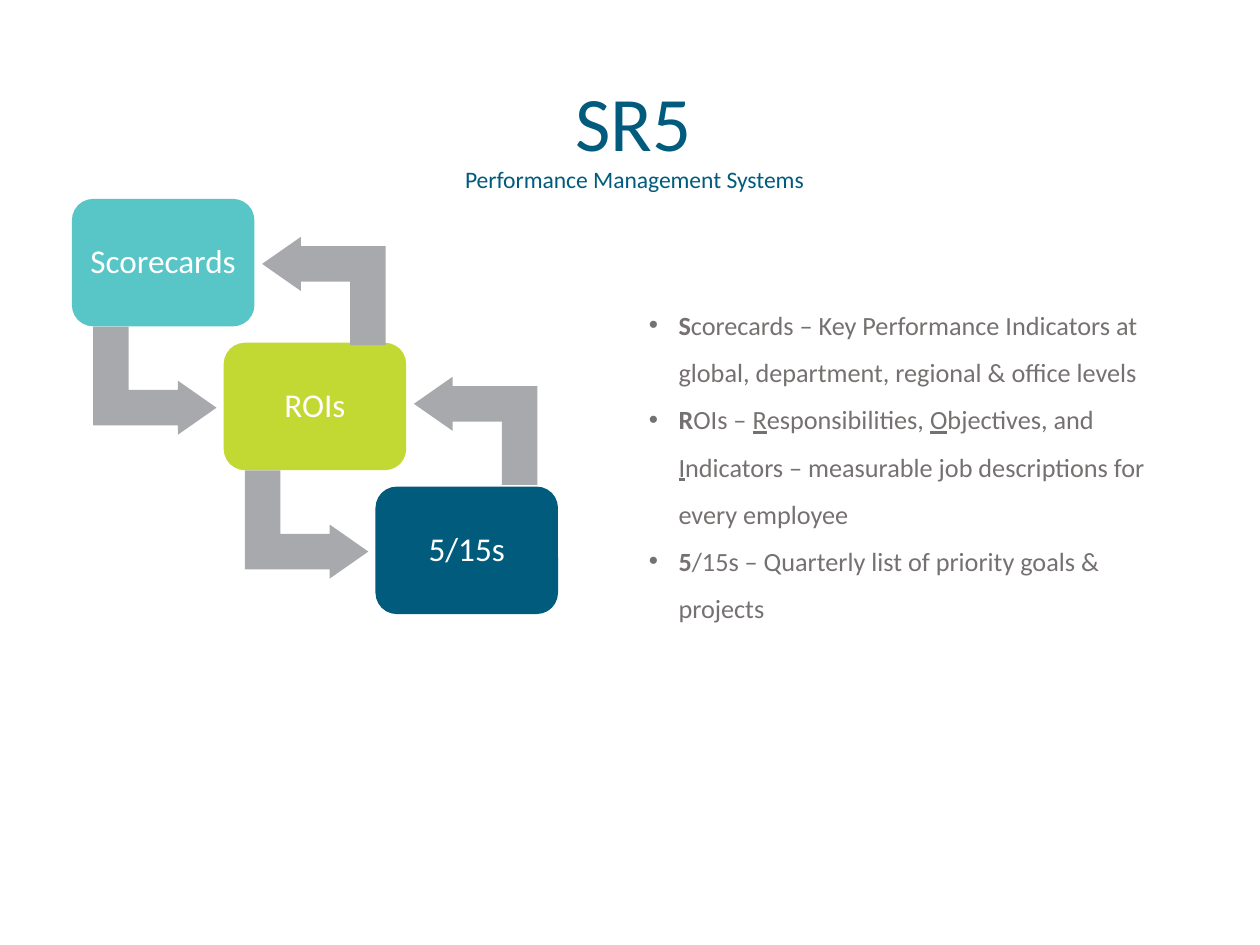
from lxml import etree
from pptx import Presentation
from pptx.dml.color import RGBColor
from pptx.enum.shapes import MSO_SHAPE
from pptx.enum.text import MSO_ANCHOR, MSO_AUTO_SIZE, PP_ALIGN
from pptx.oxml.ns import qn
from pptx.util import Cm, Pt

BENT_ARROW = MSO_SHAPE.BENT_UP_ARROW
ROUNDED = MSO_SHAPE.ROUNDED_RECTANGLE
MIDDLE = MSO_ANCHOR.MIDDLE
CENTER = PP_ALIGN.CENTER
FIT_SHAPE = MSO_AUTO_SIZE.SHAPE_TO_FIT_TEXT

COLORS = {
    "navy": "015B7D",
    "teal": "58C5C6",
    "lime": "C2D833",
    "arrow": "A7A9AC",
    "body": "767171",
    "white": "FFFFFF",
}


def set_font(para, size, color):
    para.font.name = "Calibri"
    para.font.size = Pt(size)
    para.font.color.rgb = RGBColor.from_string(COLORS[color])


def add_filled(kind, left, top, width, height, color):
    shape = page.shapes.add_shape(kind, Cm(left), Cm(top), Cm(width), Cm(height))
    shape.shadow.inherit = False
    shape.fill.solid()
    shape.fill.fore_color.rgb = RGBColor.from_string(COLORS[color])
    shape.line.fill.background()
    return shape


deck = Presentation()
deck.slide_width = Cm(25.4)
deck.slide_height = Cm(19.05)
page = deck.slides.add_slide(deck.slide_layouts[6])

headings = [
    ("SR5", 44, 0.9, (1.83, 1.17, 21.89, 2.77)),
    ("Performance Management Systems", 13.5, 1.0, (9.07, 3.18, 7.44, 0.84)),
]
for text, size, spacing, area in headings:
    box = page.shapes.add_textbox(*[Cm(value) for value in area])
    box.text_frame.word_wrap = True
    box.text_frame.vertical_anchor = MIDDLE
    para = box.text_frame.paragraphs[0]
    para.text = text
    para.alignment = CENTER
    para.line_spacing = spacing
    set_font(para, size, "navy")

bullets = [
    [("S", "bold"),
     ("corecards – Key Performance Indicators at global, department, regional & office levels", "")],
    [("R", "bold"), ("OIs – ", ""),
     ("R", "underline"), ("esponsibilities, ", ""),
     ("O", "underline"), ("bjectives, and ", ""),
     ("I", "underline"), ("ndicators – measurable job descriptions for every employee", "")],
    [("5", "bold"), ("/15s – Quarterly list of priority goals & projects", "")],
]
box = page.shapes.add_textbox(Cm(12.83), Cm(5.79), Cm(10.9), Cm(6.98))
frame = box.text_frame
frame.word_wrap = True
frame.auto_size = FIT_SHAPE
for index, spans in enumerate(bullets):
    para = frame.add_paragraph() if index else frame.paragraphs[0]
    para.line_spacing = 1.5
    properties = para._p.get_or_add_pPr()
    properties.set("marL", str(Cm(0.6)))
    properties.set("indent", str(Cm(-0.6)))
    etree.SubElement(properties, qn("a:buFont"), typeface="Arial")
    etree.SubElement(properties, qn("a:buChar"), char="•")
    set_font(para, 15, "body")
    for text, style in spans:
        span = para.add_run()
        span.text = text
        if style == "bold":
            span.font.bold = True
        elif style == "underline":
            span.font.underline = True

steps = [("Scorecards", "teal"), ("ROIs", "lime"), ("5/15s", "navy")]
step_x, step_y = 3.06, 2.9
arrow_sets = {"down": (2.03, 6.43, step_y, 90), "up": (5.44, 4.62, 2.82, 270)}

for layer in ("down", "boxes", "up"):
    if layer == "boxes":
        for index, (label, color) in enumerate(steps):
            box = add_filled(ROUNDED, 1.45 + index * step_x, 4.01 + index * step_y, 3.68, 2.57, color)
            box.adjustments[0] = 0.167
            frame = box.text_frame
            frame.word_wrap = True
            frame.vertical_anchor = MIDDLE
            frame.margin_left = frame.margin_right = Cm(0.2)
            frame.margin_top = frame.margin_bottom = Cm(0.2)
            para = frame.paragraphs[0]
            para.text = label
            para.alignment = CENTER
            para.line_spacing = 0.9
            set_font(para, 19, "white")
        continue
    left, top, drop, rotation = arrow_sets[layer]
    for index in range(len(steps) - 1):
        arrow = add_filled(BENT_ARROW, left + index * step_x, top + index * drop, 2.18, 2.49, "arrow")
        arrow.rotation = rotation
        for position, value in enumerate((0.328, 0.25, 0.358)):
            arrow.adjustments[position] = value

deck.save("out.pptx")
